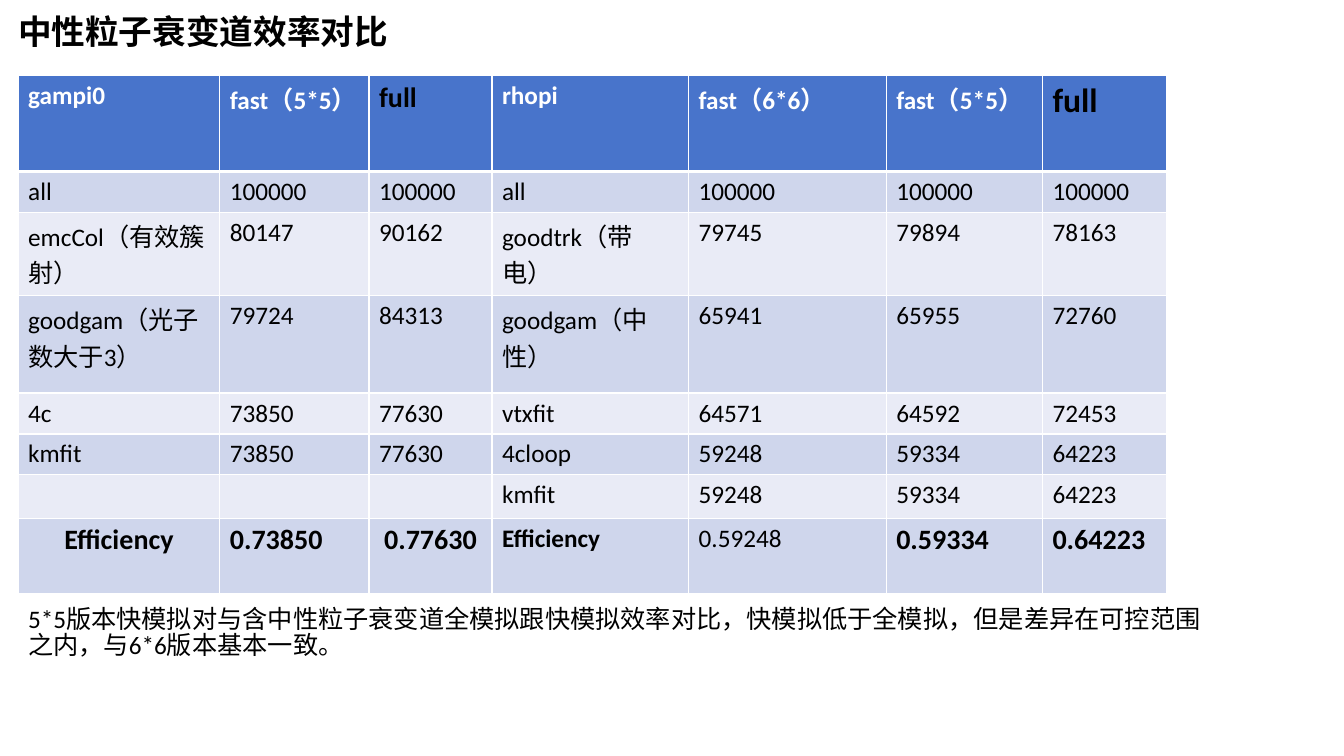
from lxml import etree
from pptx import Presentation
from pptx.dml.color import RGBColor
from pptx.enum import text
from pptx.oxml.ns import qn
from pptx.util import Inches, Pt

TITLE = "中性粒子衰变道效率对比"
NOTE = ("5*5版本快模拟对与含中性粒子衰变道全模拟跟快模拟效率对比，快模拟低于全模拟，"
        "但是差异在可控范围之内，与6*6版本基本一致。")
ROWS = [
    ("gampi0", "fast（5*5）", "full", "rhopi", "fast（6*6）", "fast（5*5）", "full"),
    ("all", "100000", "100000", "all", "100000", "100000", "100000"),
    ("emcCol（有效簇射）", "80147", "90162", "goodtrk（带电）", "79745", "79894", "78163"),
    ("goodgam（光子数大于3）", "79724", "84313", "goodgam（中性）", "65941", "65955", "72760"),
    ("4c", "73850", "77630", "vtxfit", "64571", "64592", "72453"),
    ("kmfit", "73850", "77630", "4cloop", "59248", "59334", "64223"),
    ("", "", "", "kmfit", "59248", "59334", "64223"),
    ("Efficiency", "0.73850", "0.77630", "Efficiency", "0.59248", "0.59334", "0.64223"),
]
COLUMN_WIDTHS = (2, 1.48, 1.22, 1.95, 1.96, 1.55, 1.23)
ROW_HEIGHTS = (0.95, 0.4, 0.7, 0.97, 0.4, 0.4, 0.43, 0.75)
HEADER, LAST = 0, len(ROWS) - 1

# Cells whose look differs from the 18 point default
SIZES = {(HEADER, 2): 20, (HEADER, 6): 24, **{(LAST, c): 20 for c in (0, 1, 2, 5, 6)}}
CENTRED = {(LAST, 0), (LAST, 2)}
PLAIN_EFFICIENCY = (LAST, 4)

FONT = "Calibri"
BLACK = RGBColor(0, 0, 0)
WHITE = RGBColor(255, 255, 255)
BLUE = RGBColor(0x48, 0x74, 0xCB)
BANDS = (RGBColor(0xE9, 0xEB, 0xF6), RGBColor(0xCF, 0xD6, 0xEC))


def style(paragraph, size, color=BLACK, bold=False):
    font = paragraph.font
    font.name, font.size, font.bold = FONT, Pt(size), bold
    font.color.rgb = color


def set_borders(cell, row):
    """Draw white edges, with a heavy rule below the header."""
    widths = {"L": 1, "R": 1, "T": 3 if row == HEADER + 1 else 1, "B": 3 if row == HEADER else 1}
    properties = cell._tc.get_or_add_tcPr()
    for position, (side, width) in enumerate(widths.items()):
        line = etree.Element(qn(f"a:ln{side}"), w=str(Pt(width)))
        fill = etree.SubElement(line, qn("a:solidFill"))
        etree.SubElement(fill, qn("a:srgbClr"), val=str(WHITE))
        properties.insert(position, line)


def fill_cell(cell, row, column, words):
    place = (row, column)
    cell.fill.solid()
    cell.fill.fore_color.rgb = BLUE if row == HEADER else BANDS[row % 2]
    set_borders(cell, row)
    cell.text_frame.text = words
    paragraph = cell.text_frame.paragraphs[0]
    if place in CENTRED:
        paragraph.alignment = text.PP_ALIGN.CENTER
    color = WHITE if row == HEADER and words != "full" else BLACK
    bold = row in (HEADER, LAST) and place != PLAIN_EFFICIENCY
    style(paragraph, SIZES.get(place, 18), color, bold)


deck = Presentation()
deck.slide_width, deck.slide_height = Inches(13.33), Inches(7.5)
slide = deck.slides.add_slide(deck.slide_layouts[5])

title = slide.shapes.title
title.left, title.top, title.width, title.height = map(Inches, (0.08, 0.06, 10.2, 0.82))
title.text_frame.text = TITLE
title.text_frame.auto_size = text.MSO_AUTO_SIZE.NONE
title.text_frame.vertical_anchor = text.MSO_ANCHOR.TOP
heading = title.text_frame.paragraphs[0]
heading.alignment = text.PP_ALIGN.LEFT
style(heading, 24, bold=True)

table = slide.shapes.add_table(
    len(ROWS), len(COLUMN_WIDTHS), Inches(0.18), Inches(0.75),
    Inches(sum(COLUMN_WIDTHS)), Inches(sum(ROW_HEIGHTS))).table
for column, width in zip(table.columns, COLUMN_WIDTHS):
    column.width = Inches(width)
for row, height in zip(table.rows, ROW_HEIGHTS):
    row.height = Inches(height)
for r, entries in enumerate(ROWS):
    for c, words in enumerate(entries):
        fill_cell(table.cell(r, c), r, c, words)

note = slide.shapes.add_textbox(Inches(0.18), Inches(5.98), Inches(11.91), Inches(0.71))
note.text_frame.word_wrap = True
note.text_frame.text = NOTE
conclusion = note.text_frame.paragraphs[0]
conclusion.line_spacing = 0.85
style(conclusion, 18)

deck.save("out.pptx")
